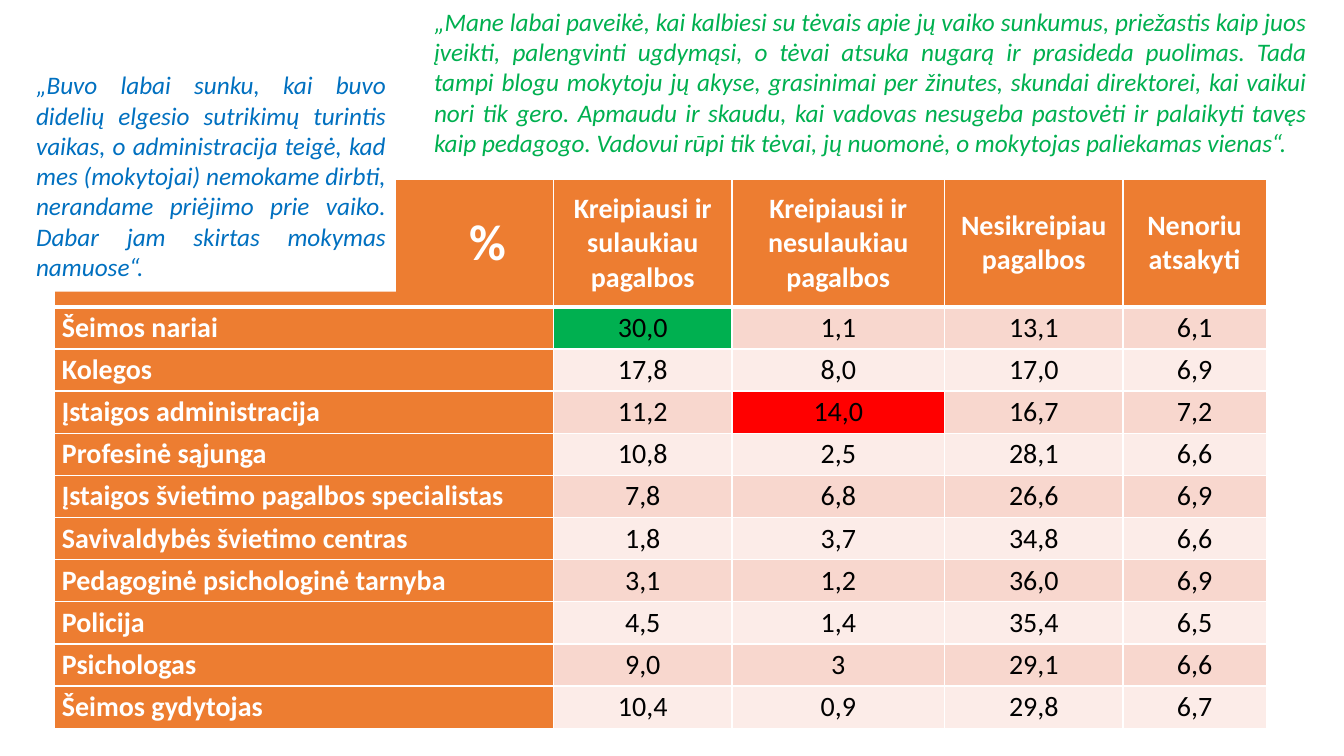
"""Build a slide with a table of help-seeking answers and two teacher quotes."""
from lxml.etree import SubElement
from pptx import Presentation
from pptx.dml.color import RGBColor
from pptx.enum.shapes import MSO_SHAPE
from pptx.enum.text import MSO_ANCHOR, PP_ALIGN
from pptx.oxml import parse_xml
from pptx.oxml.ns import nsdecls, qn
from pptx.util import Cm, Pt

WHITE, BLACK, ORANGE = "FFFFFF", "000000", "ED7D31"
BLUE, GREEN, RED = "0070C0", "00B050", "FF0000"
BANDS = ("F8D7CE", "FCECE8")

ADMINISTRATION_QUOTE = (
    "„Buvo labai sunku, kai buvo didelių elgesio sutrikimų turintis vaikas, "
    "o administracija teigė, kad mes (mokytojai) nemokame dirbti, nerandame "
    "priėjimo prie vaiko. Dabar jam skirtas mokymas namuose“."
)
PARENTS_QUOTE = (
    "„Mane labai paveikė, kai kalbiesi su tėvais apie jų vaiko sunkumus, "
    "priežastis kaip juos įveikti, palengvinti ugdymąsi, o tėvai atsuka nugarą "
    "ir prasideda puolimas. Tada tampi blogu mokytoju jų akyse, grasinimai per "
    "žinutes, skundai direktorei, kai vaikui nori tik gero. Apmaudu ir skaudu, "
    "kai vadovas nesugeba pastovėti ir palaikyti tavęs kaip pedagogo. Vadovui "
    "rūpi tik tėvai, jų nuomonė, o mokytojas paliekamas vienas“."
)
ANSWERS = (
    "%",
    "Kreipiausi ir sulaukiau pagalbos",
    "Kreipiausi ir nesulaukiau pagalbos",
    "Nesikreipiau pagalbos",
    "Nenoriu atsakyti",
)
HELPERS = (
    ("Šeimos nariai", "30,0", "1,1", "13,1", "6,1"),
    ("Kolegos", "17,8", "8,0", "17,0", "6,9"),
    ("Įstaigos administracija", "11,2", "14,0", "16,7", "7,2"),
    ("Profesinė sąjunga", "10,8", "2,5", "28,1", "6,6"),
    ("Įstaigos švietimo pagalbos specialistas", "7,8", "6,8", "26,6", "6,9"),
    ("Savivaldybės švietimo centras", "1,8", "3,7", "34,8", "6,6"),
    ("Pedagoginė psichologinė tarnyba", "3,1", "1,2", "36,0", "6,9"),
    ("Policija", "4,5", "1,4", "35,4", "6,5"),
    ("Psichologas", "9,0", "3", "29,1", "6,6"),
    ("Šeimos gydytojas", "10,4", "0,9", "29,8", "6,7"),
)
HIGHLIGHTS = {(1, 1): GREEN, (3, 2): RED}
COLUMN_SHARES = (4.95, 1.77, 2.11, 1.77, 1.42)
HEADER_HEIGHT = 3.2
PERCENT_INDENT = 9.45


def color(value):
    """Turn a hex string into a colour."""
    return RGBColor.from_string(value)


def style(paragraph, size, tone, align, bold=False, italic=False):
    """Set the font and alignment of a paragraph."""
    font = paragraph.font
    font.name, font.size, font.bold, font.italic = "Calibri", Pt(size), bold, italic
    font.color.rgb = color(tone)
    paragraph.alignment = align


def border(cell, top, bottom):
    """Give a cell white borders with the given top and bottom widths."""
    properties = cell._tc.get_or_add_tcPr()
    widths = {"lnL": 1, "lnR": 1, "lnT": top, "lnB": bottom}
    for position, (side, width) in enumerate(widths.items()):
        line = parse_xml(f'<a:{side} {nsdecls("a")} w="{Pt(width)}"/>')
        fill = SubElement(line, qn("a:solidFill"))
        SubElement(fill, qn("a:srgbClr"), val=WHITE)
        properties.insert(position, line)


def fill_cell(cell, row, column, content):
    """Write and format one cell according to its row and column."""
    header, label = row == 0, column == 0
    heading = header or label
    cell.text = content
    cell.vertical_anchor = MSO_ANCHOR.MIDDLE
    cell.margin_left = Cm(PERCENT_INDENT if header and label else 0.18)
    cell.margin_right = Cm(0.18)
    cell.margin_top = cell.margin_bottom = 0
    style(
        cell.text_frame.paragraphs[0],
        36 if header and label else 20,
        WHITE if heading else BLACK,
        PP_ALIGN.JUSTIFY if label and not header else PP_ALIGN.CENTER,
        bold=heading,
    )
    band = ORANGE if heading else BANDS[(row - 1) % 2]
    cell.fill.solid()
    cell.fill.fore_color.rgb = color(HIGHLIGHTS.get((row, column), band))
    border(cell, top=3 if row == 1 else 1, bottom=3 if header else 1)


def add_answers(slide, left, top, width, height):
    """Place the table of answers in the given box."""
    rows = (ANSWERS, *HELPERS)
    table = slide.shapes.add_table(
        len(rows), len(ANSWERS), Cm(left), Cm(top), Cm(width), Cm(height)
    ).table
    for column, share in zip(table.columns, COLUMN_SHARES):
        column.width = Cm(width * share / sum(COLUMN_SHARES))
    helper_height = (height - HEADER_HEIGHT) / len(HELPERS)
    for row, contents in enumerate(rows):
        table.rows[row].height = Cm(helper_height if row else HEADER_HEIGHT)
        for column, content in enumerate(contents):
            fill_cell(table.cell(row, column), row, column, content)


def add_quote(slide, quote, tone, left, top, width, height):
    """Place an italic quote on a white panel in the given box."""
    panel = slide.shapes.add_shape(
        MSO_SHAPE.RECTANGLE, Cm(left), Cm(top), Cm(width), Cm(height)
    )
    panel.shadow.inherit = False
    panel.fill.solid()
    panel.fill.fore_color.rgb = color(WHITE)
    panel.line.fill.background()
    frame = panel.text_frame
    frame.word_wrap = True
    frame.vertical_anchor = MSO_ANCHOR.MIDDLE
    frame.text = quote
    style(frame.paragraphs[0], 18, tone, PP_ALIGN.JUSTIFY, italic=True)


def main():
    """Build and save the presentation."""
    presentation = Presentation()
    presentation.slide_width, presentation.slide_height = Cm(33.87), Cm(19.05)
    slide = presentation.slides.add_slide(presentation.slide_layouts[6])
    add_answers(slide, 1.38, 4.53, 30.53, 13.82)
    add_quote(slide, ADMINISTRATION_QUOTE, BLUE, 0.66, 1.5, 9.32, 5.85)
    add_quote(slide, PARENTS_QUOTE, GREEN, 10.69, 0.1, 22.5, 3.92)
    presentation.save("out.pptx")


if __name__ == "__main__":
    main()
